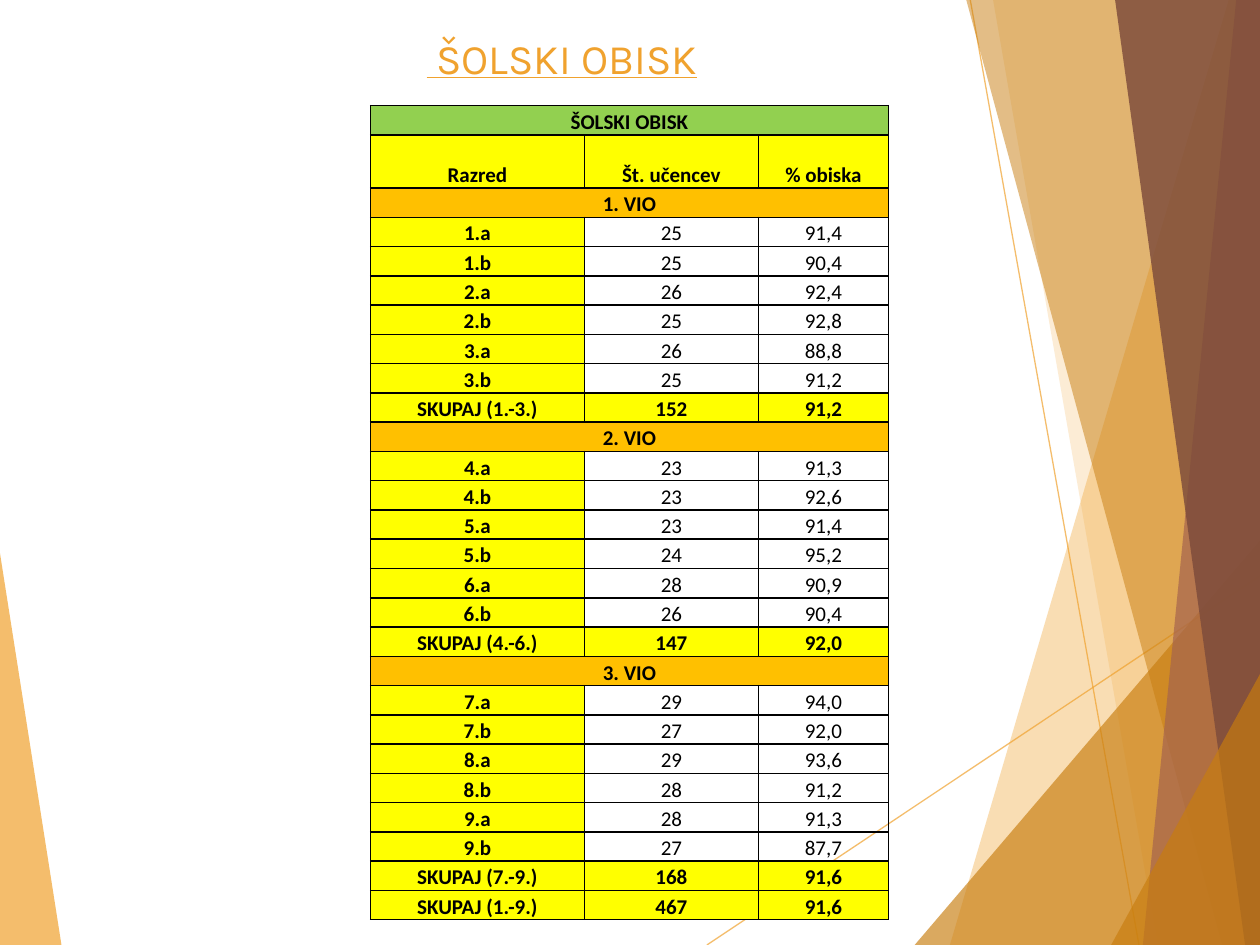
from lxml.etree import SubElement
from pptx import Presentation
from pptx.dml.color import RGBColor
from pptx.enum.shapes import MSO_CONNECTOR
from pptx.enum.text import MSO_ANCHOR, PP_ALIGN
from pptx.oxml import parse_xml
from pptx.oxml.ns import nsdecls, qn
from pptx.util import Cm, Pt

WIDTH, HEIGHT = 25.4, 19.05
COLORS = {
    "orange": "F0A22E", "amber": "C87D0E", "clay": "A5644E", "brown": "7C4B3B",
    "green": "92D050", "yellow": "FFFF00", "gold": "FFC000", "black": "000000",
}

# Content
TITLE = " ŠOLSKI OBISK"
HEADING = "ŠOLSKI OBISK"
COLUMN_NAMES = ("Razred", "Št. učencev", "% obiska")
SECTIONS = [
    ("1. VIO",
     [("1.a", "25", "91,4"), ("1.b", "25", "90,4"), ("2.a", "26", "92,4"),
      ("2.b", "25", "92,8"), ("3.a", "26", "88,8"), ("3.b", "25", "91,2")],
     ("SKUPAJ (1.-3.)", "152", "91,2")),
    ("2. VIO",
     [("4.a", "23", "91,3"), ("4.b", "23", "92,6"), ("5.a", "23", "91,4"),
      ("5.b", "24", "95,2"), ("6.a", "28", "90,9"), ("6.b", "26", "90,4")],
     ("SKUPAJ (4.-6.)", "147", "92,0")),
    ("3. VIO",
     [("7.a", "29", "94,0"), ("7.b", "27", "92,0"), ("8.a", "29", "93,6"),
      ("8.b", "28", "91,2"), ("9.a", "28", "91,3"), ("9.b", "27", "87,7")],
     ("SKUPAJ (7.-9.)", "168", "91,6")),
]
GRAND_TOTAL = ("SKUPAJ (1.-9.)", "467", "91,6")

# Background decoration, in centimetres: outline, colour, opacity in percent
BOTTOM_RIGHT, TOP_RIGHT = (WIDTH, HEIGHT), (WIDTH, 0)
RIGHT_SIDE = [BOTTOM_RIGHT, TOP_RIGHT]
LEFT_WEDGE = ([(0, 11.15), (1.24, HEIGHT), (0, HEIGHT)], "orange", 70)
THIN_LINES = [((14.25, HEIGHT), (WIDTH, 11.61)), ((19.56, 0), (22.96, HEIGHT))]
RIGHT_BANDS = [
    ([(24.77, 0), (19.15, HEIGHT)] + RIGHT_SIDE, "orange", 36),
    ([(20.02, 0), (23.34, HEIGHT)] + RIGHT_SIDE, "orange", 20),
    ([(18.44, HEIGHT), (WIDTH, 10.9), BOTTOM_RIGHT], "amber", 66),
    ([(19.48, 0), (24.64, HEIGHT)] + RIGHT_SIDE, "amber", 50),
    ([(24.92, 0), (23.04, HEIGHT)] + RIGHT_SIDE, "clay", 70),
    ([(22.48, 0), (25.1, HEIGHT)] + RIGHT_SIDE, "brown", 82),
    ([(22.4, HEIGHT), (WIDTH, 13.59), BOTTOM_RIGHT], "amber", 66),
]

# Table layout
TABLE_LEFT, TABLE_TOP = 7.47, 2.13
COLUMN_WIDTHS = (4.31, 3.51, 2.62)
ROW_HEIGHT, NAMES_HEIGHT = 0.59, 1.07
CELL_FORMAT = {
    "vertical_anchor": MSO_ANCHOR.BOTTOM, "margin_left": Cm(0.08),
    "margin_right": Cm(0.08), "margin_top": 0, "margin_bottom": 0,
}


def set_values(target, values):
    for name, value in values.items():
        setattr(target, name, value)


def rgb(name):
    return RGBColor.from_string(COLORS[name])


def set_opacity(color_parent, percent):
    color = color_parent.find(".//" + qn("a:srgbClr"))
    SubElement(color, qn("a:alpha")).set("val", str(percent * 1000))


def add_polygon(slide, points, color, opacity):
    units = [(x * 100, y * 100) for x, y in points]
    builder = slide.shapes.build_freeform(*units[0], scale=Cm(1) / 100)
    builder.add_line_segments(units[1:], close=True)
    shape = builder.convert_to_shape()
    shape.shadow.inherit = False
    shape.fill.solid()
    shape.fill.fore_color.rgb = rgb(color)
    shape.line.fill.background()
    set_opacity(shape.fill._xPr, opacity)


def add_thin_line(slide, start, end):
    line = slide.shapes.add_connector(
        MSO_CONNECTOR.STRAIGHT, *(Cm(value) for value in start + end))
    line.line.width = Pt(0.75)
    line.line.color.rgb = rgb("orange")
    properties = line._element.spPr
    set_opacity(properties, 70)
    SubElement(properties, qn("a:effectLst"))


def format_cell(cell, text, fill, bold):
    cell.text = text
    set_values(cell, CELL_FORMAT)
    paragraph = cell.text_frame.paragraphs[0]
    set_values(paragraph, {"alignment": PP_ALIGN.CENTER, "line_spacing": 1.15})
    font = paragraph.runs[0].font if text else paragraph.font
    set_values(font, {"name": "Calibri", "size": Pt(12), "bold": bold})
    font.color.rgb = rgb("black")
    # Borders come before the fill in the cell properties
    properties = cell._tc.get_or_add_tcPr()
    for position, side in enumerate(("lnL", "lnR", "lnT", "lnB")):
        properties.insert(position, parse_xml(
            f'<a:{side} {nsdecls("a")} w="12700"><a:solidFill>'
            f'<a:srgbClr val="{COLORS["black"]}"/></a:solidFill></a:{side}>'))
    if fill:
        cell.fill.solid()
        cell.fill.fore_color.rgb = rgb(fill)
    else:
        cell.fill.background()


def table_rows():
    """Return (texts, fills, bolds) for every row, top to bottom."""
    def full(texts, color):
        return texts, (color,) * 3, (True,) * 3

    rows = [full((HEADING, "", ""), "green"), full(COLUMN_NAMES, "yellow")]
    for name, classes, total in SECTIONS:
        rows.append(full((name, "", ""), "gold"))
        rows += [(texts, ("yellow", None, None), (True, False, False))
                 for texts in classes]
        rows.append(full(total, "yellow"))
    return rows + [full(GRAND_TOTAL, "yellow")]


def add_attendance_table(slide):
    rows = table_rows()
    heights = [ROW_HEIGHT] * len(rows)
    heights[1] = NAMES_HEIGHT
    table = slide.shapes.add_table(
        len(rows), len(COLUMN_WIDTHS), Cm(TABLE_LEFT), Cm(TABLE_TOP),
        Cm(sum(COLUMN_WIDTHS)), Cm(sum(heights))).table
    set_values(table, {"first_row": False, "horz_banding": False})
    for column, width in zip(table.columns, COLUMN_WIDTHS):
        column.width = Cm(width)
    for index, (texts, fills, bolds) in enumerate(rows):
        table.rows[index].height = Cm(heights[index])
        cells = list(table.rows[index].cells)
        for cell, text, fill, bold in zip(cells, texts, fills, bolds):
            format_cell(cell, text, fill, bold)
        if not texts[1]:
            cells[0].merge(cells[-1])


def add_title(slide):
    box = slide.shapes.add_textbox(Cm(3.5), Cm(0.53), Cm(20.83), Cm(1.6))
    set_values(box.text_frame,
               {"word_wrap": True, "vertical_anchor": MSO_ANCHOR.TOP})
    paragraph = box.text_frame.paragraphs[0]
    paragraph._p.get_or_add_pPr().set("marL", str(Cm(4.85)))
    run = paragraph.add_run()
    run.text = TITLE
    set_values(run.font, {"name": "Karla", "size": Pt(24), "underline": True})
    run.font.color.rgb = rgb("orange")


def main():
    presentation = Presentation()
    set_values(presentation,
               {"slide_width": Cm(WIDTH), "slide_height": Cm(HEIGHT)})
    slide = presentation.slides.add_slide(presentation.slide_layouts[6])
    add_polygon(slide, *LEFT_WEDGE)
    for start, end in THIN_LINES:
        add_thin_line(slide, start, end)
    for band in RIGHT_BANDS:
        add_polygon(slide, *band)
    add_title(slide)
    add_attendance_table(slide)
    presentation.save("out.pptx")


if __name__ == "__main__":
    main()
